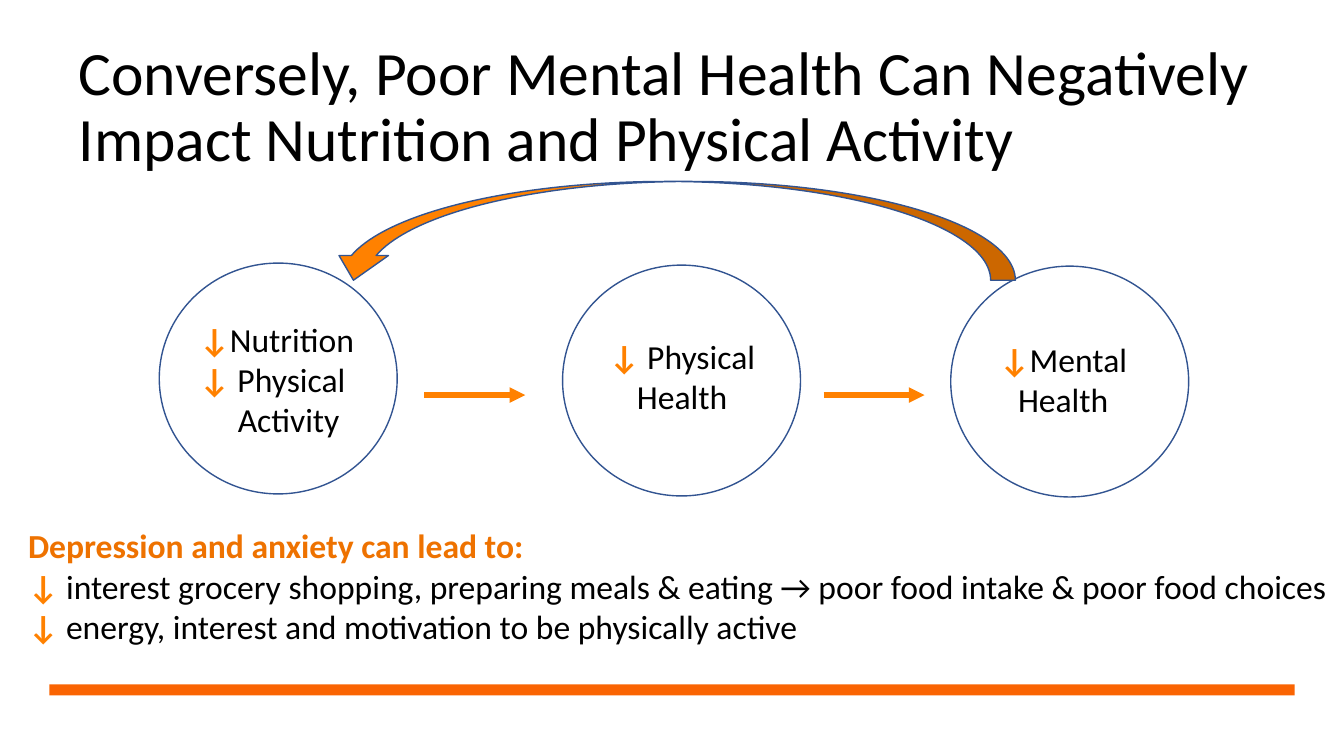
"""Build the slide on how poor mental health affects nutrition and activity."""
from dataclasses import dataclass

from lxml import etree
from pptx import Presentation
from pptx.dml.color import RGBColor
from pptx.enum.shapes import MSO_CONNECTOR, MSO_SHAPE
from pptx.enum.text import MSO_ANCHOR, MSO_AUTO_SIZE, PP_ALIGN
from pptx.oxml.ns import qn
from pptx.util import Inches, Pt

LEFT, CENTER = PP_ALIGN.LEFT, PP_ALIGN.CENTER
MIDDLE = MSO_ANCHOR.MIDDLE
NO_AUTOFIT = MSO_AUTO_SIZE.NONE
RECTANGLE, OVAL = MSO_SHAPE.RECTANGLE, MSO_SHAPE.OVAL
CURVED_ARROW = MSO_SHAPE.CURVED_UP_ARROW
STRAIGHT = MSO_CONNECTOR.STRAIGHT


@dataclass(frozen=True)
class Theme:
    font: str = "Calibri"
    title_size: Pt = Pt(44)
    body_size: Pt = Pt(24)
    text: RGBColor = RGBColor(0, 0, 0)
    heading: RGBColor = RGBColor(0xEE, 0x72, 0x00)
    arrow: RGBColor = RGBColor(0xFF, 0x81, 0x00)
    bar: RGBColor = RGBColor(0xFA, 0x64, 0x02)
    outline: RGBColor = RGBColor(0x32, 0x54, 0x91)


theme = Theme()


def add_text(paragraph, text, size=theme.body_size, color=theme.text, bold=False):
    run = paragraph.add_run()
    run.text = text
    run.font.name = theme.font
    run.font.size = size
    run.font.color.rgb = color
    run.font.bold = bold


def add_outlined_shape(kind, left, top, width, height, fill=None, line=theme.outline):
    shape = slide.shapes.add_shape(kind, Inches(left), Inches(top), Inches(width), Inches(height))
    shape.shadow.inherit = False
    if fill is None:
        shape.fill.background()
    else:
        shape.fill.solid()
        shape.fill.fore_color.rgb = fill
    if line is None:
        shape.line.fill.background()
    else:
        shape.line.color.rgb = line
        shape.line.width = Pt(1)
    return shape


presentation = Presentation()
presentation.slide_width = Inches(13.33)
presentation.slide_height = Inches(7.5)
slide = presentation.slides.add_slide(presentation.slide_layouts[5])

title = slide.shapes.title
title.left, title.top = Inches(0.68), Inches(0.32)
title.width, title.height = Inches(12.13), Inches(1.51)
title.text_frame.auto_size = NO_AUTOFIT
title.text_frame.vertical_anchor = MIDDLE
title_paragraph = title.text_frame.paragraphs[0]
title_paragraph.alignment = LEFT
title_paragraph.line_spacing = 0.9
add_text(
    title_paragraph,
    "Conversely, Poor Mental Health Can Negatively Impact Nutrition and Physical Activity",
    size=theme.title_size,
)

add_outlined_shape(RECTANGLE, 0.49, 6.79, 12.35, 0.11, fill=theme.bar, line=None)

for left, top in [(9.43, 2.64), (5.58, 2.63), (1.58, 2.61)]:
    add_outlined_shape(OVAL, left, top, 2.36, 2.29)

feedback_arrow = add_outlined_shape(CURVED_ARROW, 3.26, 1.8, 6.81, 0.98, fill=theme.arrow)
feedback_arrow.rotation = 180

for left in (4.21, 8.17):
    connector = slide.shapes.add_connector(
        STRAIGHT, Inches(left), Inches(3.92), Inches(left + 1), Inches(3.92)
    )
    connector.line.color.rgb = theme.arrow
    connector.line.width = Pt(3.75)
    etree.SubElement(connector.line._get_or_add_ln(), qn("a:tailEnd"), type="triangle")
    etree.SubElement(connector._element.spPr, qn("a:effectLst"))

text_boxes = [
    (1.88, 3.11, 2.29, 1.31, LEFT, [("↓", "Nutrition"), ("↓", " Physical"), ("", "Activity")]),
    (5.87, 3.28, 1.79, 0.91, CENTER, [("↓ ", "Physical Health")]),
    (9.47, 3.31, 2.15, 0.91, CENTER, [("↓", "Mental"), ("", "Health")]),
    (0.18, 5.16, 13.14, 1.31, LEFT, [
        ("Depression and anxiety can lead to:", ""),
        ("↓ ", "interest grocery shopping, preparing meals & eating → poor food intake & poor food choices"),
        ("↓", " energy, interest and motivation to be physically active"),
    ]),
]
for left, top, width, height, alignment, lines in text_boxes:
    text_box = slide.shapes.add_textbox(Inches(left), Inches(top), Inches(width), Inches(height))
    text_frame = text_box.text_frame
    text_frame.word_wrap = True
    for index, (accent, wording) in enumerate(lines):
        paragraph = text_frame.add_paragraph() if index else text_frame.paragraphs[0]
        paragraph.alignment = alignment
        if accent:
            add_text(paragraph, accent, color=theme.arrow if wording else theme.heading, bold=True)
        elif alignment == LEFT:
            paragraph._p.get_or_add_pPr().set("marL", str(Inches(0.38)))
        if wording:
            add_text(paragraph, wording)

presentation.save("out.pptx")
